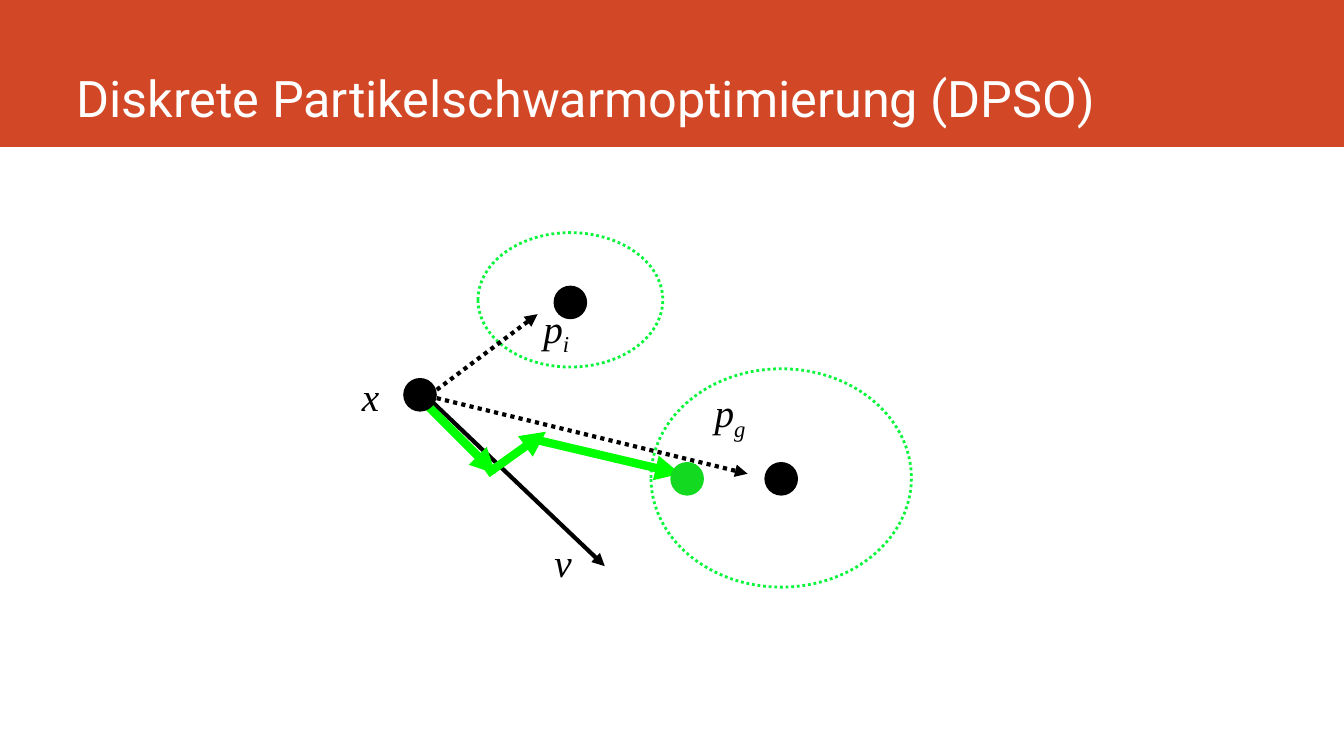
"""Builds the slide on discrete particle swarm optimisation."""
from dataclasses import dataclass
from typing import Optional

from lxml import etree
from pptx import Presentation
from pptx import util as u
from pptx.dml.color import RGBColor
from pptx.enum import dml, shapes, text
from pptx.oxml import ns
from pptx.shapes.autoshape import Shape
from pptx.slide import Slide

WIDTH, HEIGHT = u.Inches(13.333), u.Inches(7.5)
COLUMNS, ROWS = 160, 90

BAND = RGBColor(0xD2, 0x47, 0x26)
WHITE = RGBColor(0xFF, 0xFF, 0xFF)
BLACK = RGBColor(0x00, 0x00, 0x00)
STEP_GREEN = RGBColor(0x00, 0xFF, 0x00)
REGION_GREEN = RGBColor(0x0B, 0xF5, 0x3D)
TARGET_GREEN = RGBColor(0x13, 0xD9, 0x21)

TITLE_FONT, SYMBOL_FONT = "Roboto", "Times New Roman"
TITLE_SIZE, SYMBOL_SIZE = 36, 28
PARTICLE_SIZE = 4


@dataclass(frozen=True)
class Box:
    column: float
    row: float
    columns: float
    rows: float

    def lengths(self) -> tuple[int, int, int, int]:
        return across(self.column), down(self.row), across(self.columns), down(self.rows)


@dataclass(frozen=True)
class Arrow:
    start: tuple[float, float]
    end: tuple[float, float]
    color: RGBColor = BLACK
    weight: float = 3
    dotted: bool = False


@dataclass(frozen=True)
class Label:
    box: Box
    symbol: str
    index: str = ""
    anchor: text.MSO_ANCHOR = text.MSO_ANCHOR.TOP


@dataclass(frozen=True)
class Particle:
    column: float
    row: float
    color: RGBColor = BLACK


BAND_BOX = Box(0, 0, COLUMNS, 17.5)
TITLE_BOX = Box(7.9, 0, 141.1, 15.8)
REGIONS = [Box(77.5, 43.9, 31, 26), Box(56.9, 27.7, 22, 16)]
ARROWS = [
    Arrow((51, 47.4), (72, 67.4)),
    Arrow((52, 46.4), (64, 37.4), dotted=True),
    Arrow((52, 47.4), (89, 56.4), dotted=True),
    Arrow((51, 48.4), (59, 56.4), STEP_GREEN, 6),
    Arrow((58, 56.4), (65, 51.4), STEP_GREEN, 6),
    Arrow((64, 52.4), (81, 56.4), STEP_GREEN, 6),
]
LABELS = [
    Label(Box(41.9, 43.7, 7, 6.8), "x"),
    Label(Box(83.9, 45.6, 11, 6.8), "p", "g"),
    Label(Box(63.5, 35.6, 7, 6.8), "p", "i"),
    Label(Box(64.8, 63.5, 4.4, 6.8), "v", anchor=text.MSO_ANCHOR.MIDDLE),
]
PARTICLES = [
    Particle(48, 45),
    Particle(91, 55),
    Particle(65.9, 34),
    Particle(79.8, 55, TARGET_GREEN),
]


def across(columns: float) -> int:
    return round(WIDTH * columns / COLUMNS)


def down(rows: float) -> int:
    return round(HEIGHT * rows / ROWS)


def add_filled(slide: Slide, kind: shapes.MSO_SHAPE, box: Box, color: Optional[RGBColor]) -> Shape:
    shape = slide.shapes.add_shape(kind, *box.lengths())
    shape.shadow.inherit = False
    shape.line.fill.background()
    if color is None:
        shape.fill.background()
    else:
        shape.fill.solid()
        shape.fill.fore_color.rgb = color
    return shape


def add_region(slide: Slide, box: Box) -> None:
    region = add_filled(slide, shapes.MSO_SHAPE.OVAL, box, None)
    region.line.color.rgb = REGION_GREEN
    region.line.width = u.Pt(2)
    region.line.dash_style = dml.MSO_LINE.ROUND_DOT


def add_arrow(slide: Slide, arrow: Arrow) -> None:
    (left, top), (right, bottom) = arrow.start, arrow.end
    connector = slide.shapes.add_connector(
        shapes.MSO_CONNECTOR.STRAIGHT, across(left), down(top), across(right), down(bottom))
    connector.line.color.rgb = arrow.color
    connector.line.width = u.Pt(arrow.weight)
    if arrow.dotted:
        connector.line.dash_style = dml.MSO_LINE.ROUND_DOT
    properties = connector.element.spPr
    outline = properties.find(ns.qn("a:ln"))
    etree.SubElement(outline, ns.qn("a:tailEnd"), type="triangle")
    etree.SubElement(properties, ns.qn("a:effectLst"))


def add_text(slide: Slide, box: Box, anchor: text.MSO_ANCHOR, runs: list[str],
             font_name: str, size: float, color: RGBColor, italic: bool = False) -> None:
    frame = slide.shapes.add_textbox(*box.lengths()).text_frame
    frame.word_wrap = True
    frame.vertical_anchor = anchor
    paragraph = frame.paragraphs[0]
    for position, words in enumerate(runs):
        run = paragraph.add_run()
        run.text = words
        run.font.name = font_name
        run.font.size = u.Pt(size)
        run.font.italic = italic
        run.font.color.rgb = color
        if position:
            run.font._element.set("baseline", "-25000")


def add_label(slide: Slide, label: Label) -> None:
    runs = [part for part in (label.symbol, label.index) if part]
    add_text(slide, label.box, label.anchor, runs, SYMBOL_FONT, SYMBOL_SIZE, BLACK, italic=True)


def add_particle(slide: Slide, particle: Particle) -> None:
    box = Box(particle.column, particle.row, PARTICLE_SIZE, PARTICLE_SIZE)
    add_filled(slide, shapes.MSO_SHAPE.OVAL, box, particle.color)


def main() -> None:
    presentation = Presentation()
    presentation.slide_width, presentation.slide_height = WIDTH, HEIGHT
    slide = presentation.slides.add_slide(presentation.slide_layouts[6])
    add_filled(slide, shapes.MSO_SHAPE.RECTANGLE, BAND_BOX, BAND)
    add_text(slide, TITLE_BOX, text.MSO_ANCHOR.BOTTOM,
             ["Diskrete Partikelschwarmoptimierung (DPSO)"], TITLE_FONT, TITLE_SIZE, WHITE)
    for region in REGIONS:
        add_region(slide, region)
    for arrow in ARROWS:
        add_arrow(slide, arrow)
    for label in LABELS:
        add_label(slide, label)
    for particle in PARTICLES:
        add_particle(slide, particle)
    presentation.save("out.pptx")


if __name__ == "__main__":
    main()
